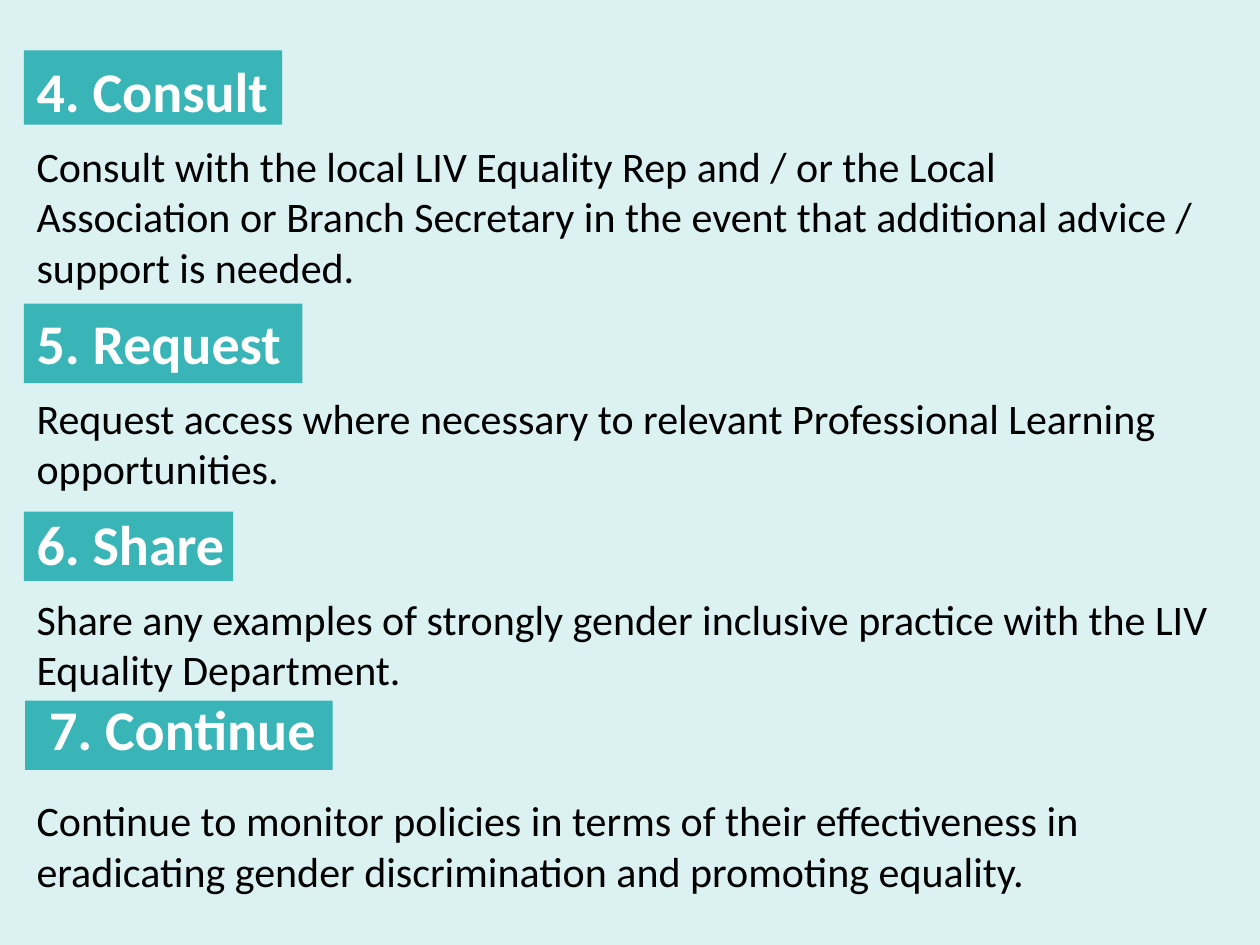
from dataclasses import dataclass

from lxml.etree import SubElement
from pptx import Presentation
from pptx.dml.color import RGBColor
from pptx.enum.shapes import MSO_SHAPE as Shape
from pptx.enum.text import MSO_ANCHOR as Anchor, MSO_AUTO_SIZE as AutoSize
from pptx.oxml.ns import qn
from pptx.util import Pt

TEAL, PALE_TEAL, WHITE, BLACK = "39B4B7", "DCF1F2", "FFFFFF", "000000"
LEFT, TOP = 13.7, 28.8
GAP = 9.5  # height of one small line


@dataclass
class Step:
    heading: str
    advice: list[str]
    band: tuple[float, float, float]  # top, width, height
    band_left: float = LEFT
    gap_above: float = GAP
    gap_below: float = GAP
    indent: float = 0


STEPS = [
    Step("4. Consult",
         ["Consult with the local LIV Equality Rep and / or the Local",
          "Association or Branch Secretary in the event that additional "
          "advice / support is needed."],
         (TOP, 147.6, 42.5), gap_above=0),
    Step("5. Request",
         ["Request access where necessary to relevant Professional Learning "
          "opportunities."],
         (173.5, 159.1, 45.4)),
    Step("6. Share",
         ["Share any examples of strongly gender inclusive practice with the "
          "LIV Equality Department."],
         (292.4, 119.5, 39.6)),
    Step("7. Continue",
         ["Continue to monitor policies in terms of their effectiveness in "
          "eradicating gender discrimination and promoting equality."],
         (400.3, 175.7, 39.6), band_left=14.4,
         gap_above=0, gap_below=2 * GAP, indent=7.2),
]


def rgb(value: str) -> RGBColor:
    return RGBColor.from_string(value)


def draw_band(slide, step: Step) -> None:
    top, width, height = step.band
    band = slide.shapes.add_shape(
        Shape.RECTANGLE, Pt(step.band_left), Pt(top), Pt(width), Pt(height))
    band.shadow.inherit = False
    band.fill.solid()
    band.fill.fore_color.rgb = rgb(TEAL)
    band.line.fill.background()


def write_line(paragraph, text: str, size: float, color: str, bold: bool,
               gap: float, indent: float = 0) -> None:
    paragraph.text = text
    paragraph.space_before = Pt(gap)
    paragraph.space_after = Pt(0)
    paragraph.line_spacing = 1.0
    font = paragraph.font
    font.name, font.size, font.bold = "Calibri", Pt(size), bold
    font.color.rgb = rgb(color)
    # No bullet and no hanging indent
    properties = paragraph._p.get_or_add_pPr()
    properties.set("marL", str(Pt(indent)))
    properties.set("indent", "0")
    bullet = SubElement(properties, qn("a:buNone"))
    properties.find(qn("a:defRPr")).addprevious(bullet)


def write_steps(frame, steps: list[Step]) -> None:
    lines = []
    for step in steps:
        lines.append((step.heading, 32, WHITE, True, step.gap_above, step.indent))
        for number, advice in enumerate(step.advice):
            gap = 0 if number else step.gap_below
            lines.append((advice, 24, BLACK, False, gap))
    for number, line in enumerate(lines):
        paragraph = frame.add_paragraph() if number else frame.paragraphs[0]
        write_line(paragraph, *line)


def main() -> None:
    deck = Presentation()
    deck.slide_width, deck.slide_height = Pt(720), Pt(540)
    slide = deck.slides.add_slide(deck.slide_layouts[1])
    slide.background.fill.solid()
    slide.background.fill.fore_color.rgb = rgb(PALE_TEAL)

    # The headings share the body text, so no title is needed
    title = slide.shapes.title._element
    title.getparent().remove(title)

    # Heading bands
    for step in reversed(STEPS):
        draw_band(slide, step)

    # Steps, in front of the bands
    body = slide.placeholders[1]
    body.left, body.top = Pt(LEFT), Pt(TOP)
    body.width, body.height = Pt(691.9), Pt(501.8)
    frame = body.text_frame
    frame.word_wrap = True
    frame.auto_size = AutoSize.NONE
    frame.vertical_anchor = Anchor.TOP
    write_steps(frame, STEPS)
    slide.shapes._spTree.append(body._element)

    deck.save("out.pptx")


if __name__ == "__main__":
    main()
